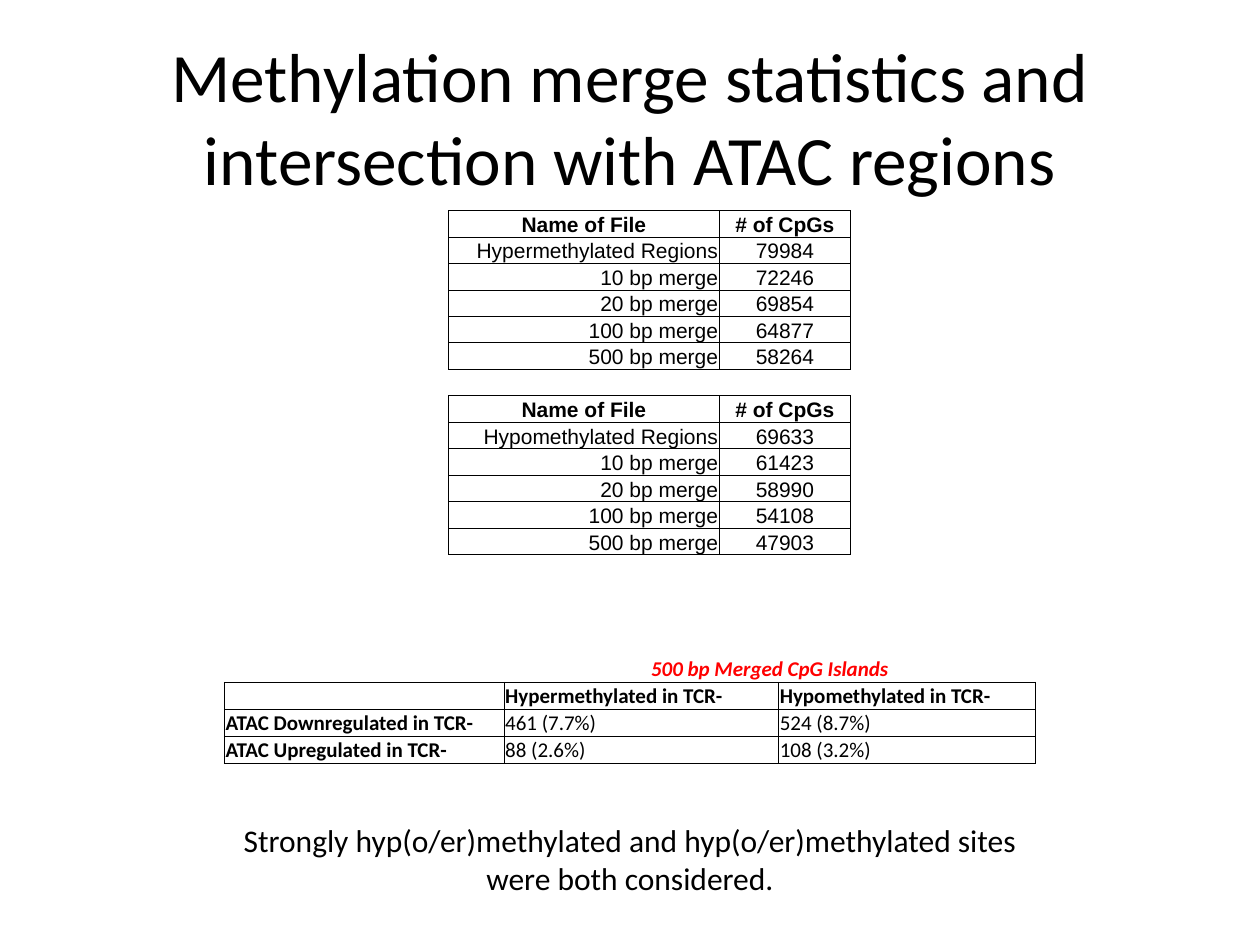
import pptx
import pptx.util
import pptx.dml.color
import pptx.enum.text
import pptx.oxml.ns
import lxml.etree

Pt = pptx.util.Pt
RGB = pptx.dml.color.RGBColor
ALIGN = pptx.enum.text.PP_ALIGN
ANCHOR = pptx.enum.text.MSO_ANCHOR
THEME = {
    "ink": RGB(0, 0, 0), "accent": RGB(255, 0, 0), "border": "000000", "border_pt": 0.5,
    "body": "Calibri", "data": "Arial", "title_pt": 39.6, "note_pt": 18, "table_pt": 12,
}
NO_STYLE = "{2D5ABB26-0587-4C30-8999-92F81FD0307C}"

prs = pptx.Presentation()
prs.slide_width = pptx.util.Inches(10)
prs.slide_height = pptx.util.Inches(7.5)
COL, ROW = prs.slide_width / 100, prs.slide_height / 75
s = prs.slides.add_slide(prs.slide_layouts[6])


def add_run(p, text, font, size, bold=False, italic=False, color=THEME["ink"]):
    r = p.add_run()
    r.text = text
    r.font.name, r.font.size = font, Pt(size)
    r.font.bold, r.font.italic = bold, italic
    r.font.color.rgb = color


def add_grid(left, top, widths, row_height, rows, font):
    """Draw rows of (text, alignment, border sides, run style) cells."""
    frame = s.shapes.add_table(len(rows), len(widths), int(left * COL), int(top * ROW),
                               int(sum(widths) * COL), int(len(rows) * row_height * ROW))
    t = frame.table
    t.first_row = t.horz_banding = False
    t._tbl.tblPr.find(pptx.oxml.ns.qn("a:tableStyleId")).text = NO_STYLE
    for column, width in zip(t.columns, widths):
        column.width = int(width * COL)
    for i, row in enumerate(rows):
        t.rows[i].height = int(row_height * ROW)
        for j, (text, align, sides, style) in enumerate(row):
            cell = t.cell(i, j)
            cell.margin_left = cell.margin_right = cell.margin_top = int(0.1 * COL)
            cell.margin_bottom = 0
            cell.vertical_anchor = ANCHOR.BOTTOM
            p = cell.text_frame.paragraphs[0]
            p.alignment = align
            if text:
                add_run(p, text, font, THEME["table_pt"], **style)
            else:
                p._p.get_or_add_endParaRPr().set("sz", str(THEME["table_pt"] * 100))
            tcPr = cell._tc.get_or_add_tcPr()
            for side in "LRTB":
                ln = lxml.etree.SubElement(tcPr, pptx.oxml.ns.qn("a:ln" + side))
                ln.set("w", str(int(Pt(THEME["border_pt"]))))
                if side in sides:
                    fill = lxml.etree.SubElement(ln, pptx.oxml.ns.qn("a:solidFill"))
                    clr = lxml.etree.SubElement(fill, pptx.oxml.ns.qn("a:srgbClr"))
                    clr.set("val", THEME["border"])
                else:
                    lxml.etree.SubElement(ln, pptx.oxml.ns.qn("a:noFill"))
            cell.fill.background()
    return t


# Title and closing note
for text, size, anchor, (x, y, w, h) in [
    ("Methylation merge statistics and intersection with ATAC regions",
     THEME["title_pt"], ANCHOR.MIDDLE, (5, 3, 90, 12.5)),
    ("Strongly hyp(o/er)methylated and hyp(o/er)methylated sites were both considered.",
     THEME["note_pt"], ANCHOR.TOP, (16.4, 64.7, 67.2, 7.1)),
]:
    sp = s.shapes.add_textbox(int(x * COL), int(y * ROW), int(w * COL), int(h * ROW))
    tf = sp.text_frame
    tf.word_wrap = True
    tf.vertical_anchor = anchor
    p = tf.paragraphs[0]
    p.alignment = ALIGN.CENTER
    add_run(p, text, THEME["body"], size)

# CpG counts: two blocks with an open row between them
BOLD = {"bold": True}
merges = ["10 bp merge", "20 bp merge", "100 bp merge", "500 bp merge"]
counts = {
    "Hypermethylated Regions": [79984, 72246, 69854, 64877, 58264],
    "Hypomethylated Regions": [69633, 61423, 58990, 54108, 47903],
}
cpg_rows = []
for regions, values in counts.items():
    if cpg_rows:
        cpg_rows.append([("", ALIGN.CENTER, "TB", {})] * 2)
    cpg_rows.append([(head, ALIGN.CENTER, "LRTB", BOLD) for head in ("Name of File", "# of CpGs")])
    for name, value in zip([regions] + merges, values):
        cpg_rows.append([(name, ALIGN.RIGHT, "LRTB", {}),
                         (str(value), ALIGN.CENTER, "LRTB", {})])
add_grid(35.6, 16.7, [21.5, 10.4], 2.08, cpg_rows, THEME["data"])

# ATAC intersection
caption = {"bold": True, "italic": True, "color": THEME["accent"]}
atac_rows = [[("", ALIGN.LEFT, "B", {}),
              ("500 bp Merged CpG Islands", ALIGN.CENTER, "B", caption),
              ("", ALIGN.CENTER, "B", {})]]
for i, texts in enumerate([
    ("", "Hypermethylated in TCR-", "Hypomethylated in TCR-"),
    ("ATAC Downregulated in TCR-", "461 (7.7%)", "524 (8.7%)"),
    ("ATAC Upregulated in TCR-", "88 (2.6%)", "108 (3.2%)"),
]):
    atac_rows.append([(text, ALIGN.LEFT, "LRTB", {"bold": i == 0 or j == 0})
                      for j, text in enumerate(texts)])
atac = add_grid(17.8, 52, [22.2, 21.8, 20.4], 2.15, atac_rows, THEME["body"])
atac.cell(0, 1).merge(atac.cell(0, 2))

prs.save("out.pptx")
